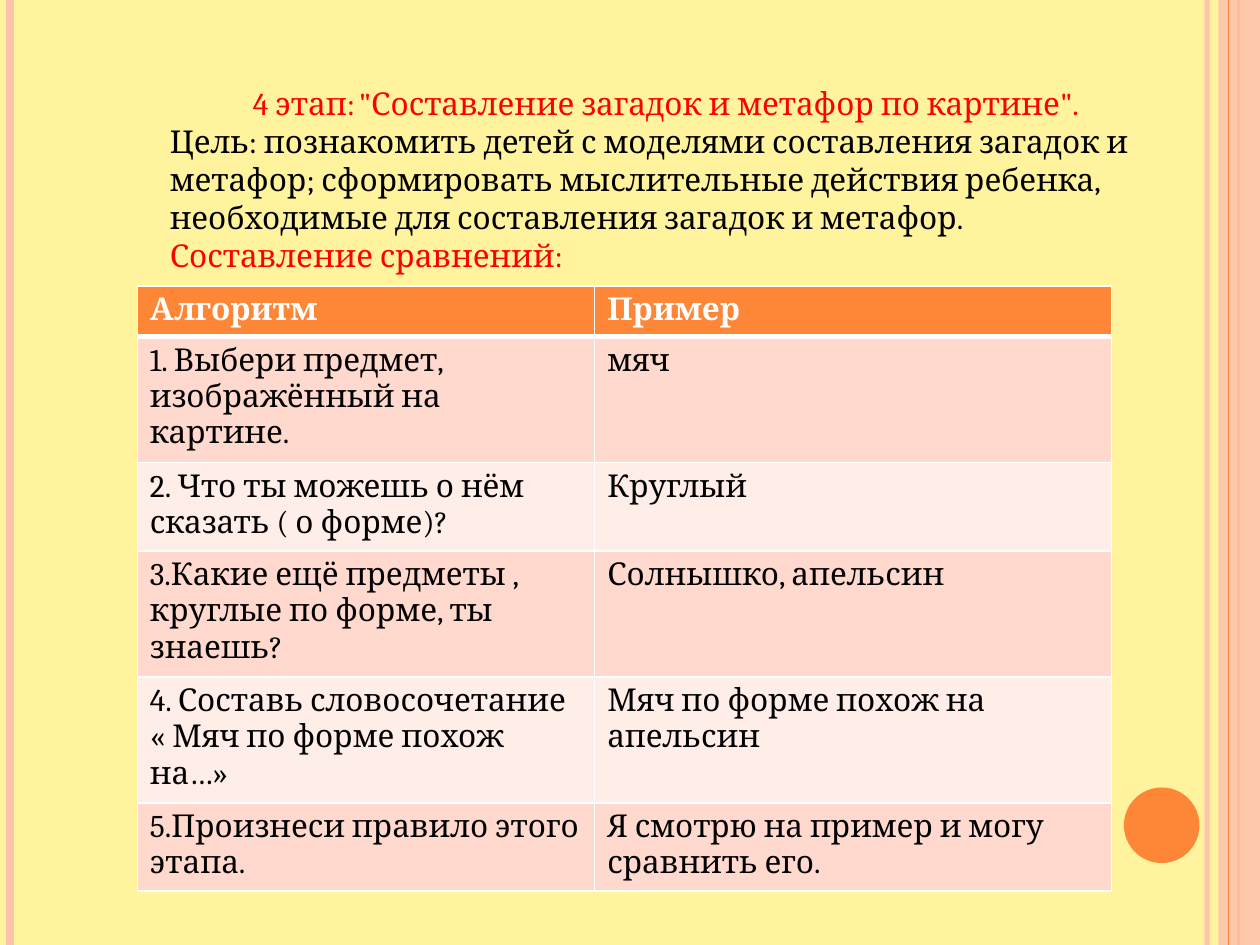
from dataclasses import dataclass
from typing import Any

from lxml import etree
from pptx import Presentation
from pptx import util as u
from pptx.dml import color as dml
from pptx.enum import shapes, text
from pptx.oxml import ns

COLORS = {
    "background": "FFF39D",
    "peach": "FEC3AE",
    "orange": "FE8637",
    "red": "FF0000",
    "black": "000000",
    "white": "FFFFFF",
    "dark_band": "FFD9CE",
    "light_band": "FFEDE8",
}
FONT = {"name": "Cambria", "size": u.Pt(18)}
FRAME = {"word_wrap": True, "vertical_anchor": text.MSO_ANCHOR.TOP}
TABLE_FLAGS = {"first_row": True, "horz_banding": False}
CELL = u.Inches(0.1)
ROWS = 75
COLUMNS = 100


@dataclass(frozen=True)
class Stripe:
    column: float
    weight: float
    color: str
    opacity: int = 100


@dataclass(frozen=True)
class Block:
    left: float
    top: float
    width: float
    height: float


@dataclass(frozen=True)
class Line:
    wording: str
    color: str
    indent: float = 0
    tab: float = 0


LEFT_STRIPES = [
    Stripe(95.8, 3, "peach", 93),
    Stripe(0.8, 4.5, "peach"),
    Stripe(98.3, 1.5, "orange"),
]
INNER_STRIPE = Stripe(97.5, 0.75, "orange")
SIDE_BAND = Block(96.7, 0, 3.3, ROWS)
DISC = Block(89.2, 62.5, 6, 6)
INTRODUCTION = Block(12.5, 6.2, 79.7, 22.2)
ALGORITHM = Block(10.9, 22.7, 77.3, 42)
COLUMN_WIDTHS = [36.3, 41]
ROW_HEIGHTS = [3, 5.2, 5.2, 7.4, 5.2, 5.2]

LINES = [
    Line("4 этап:\t\"Составление загадок и метафор по картине\".", "red", 6.6, 16.3),
    Line("Цель: познакомить детей с моделями составления загадок и метафор; "
         "сформировать мыслительные действия ребенка, необходимые для "
         "составления загадок и метафор.", "black"),
    Line("Составление сравнений:", "red"),
]
STEPS = [
    ("Алгоритм", "Пример"),
    ("1. Выбери предмет, изображённый на картине.", "мяч"),
    ("2. Что ты можешь о нём сказать ( о форме)?", "Круглый"),
    ("3.Какие ещё предметы , круглые по форме, ты знаешь?", "Солнышко, апельсин"),
    ("4. Составь словосочетание « Мяч по форме похож на…»",
     "Мяч по форме похож на апельсин"),
    ("5.Произнеси правило этого этапа.", "Я смотрю на пример и могу сравнить его."),
]


def grid(count: float) -> int:
    return round(count * CELL)


def area(block: Block) -> list[int]:
    return [grid(side) for side in (block.left, block.top, block.width, block.height)]


def apply(target: Any, values: dict[str, Any]) -> None:
    for name, value in values.items():
        setattr(target, name, value)


def paint(fill: Any, color: str, opacity: int = 100) -> None:
    fill.solid()
    fill.fore_color.rgb = dml.RGBColor.from_string(COLORS[color])
    if opacity < 100:
        tint = fill._xPr.find(".//" + ns.qn("a:srgbClr"))
        etree.SubElement(tint, ns.qn("a:alpha"), val=str(opacity * 1000))


def write(paragraph: Any, wording: str, color: str, bold: bool = False) -> None:
    run = paragraph.add_run()
    run.text = wording
    apply(run.font, FONT | {"bold": bold})
    paint(run.font.fill, color)


def draw_stripe(slide: Any, stripe: Stripe) -> None:
    column = grid(stripe.column)
    connector = slide.shapes.add_connector(
        shapes.MSO_CONNECTOR.STRAIGHT, column, 0, column, grid(ROWS))
    connector.line.width = u.Pt(stripe.weight)
    paint(connector.line.fill, stripe.color, stripe.opacity)
    etree.SubElement(connector._element.spPr, ns.qn("a:effectLst"))


def draw_shape(slide: Any, kind: Any, block: Block, color: str, opacity: int = 100) -> None:
    shape = slide.shapes.add_shape(kind, *area(block))
    shape.shadow.inherit = False
    shape.line.fill.background()
    paint(shape.fill, color, opacity)


def draw_introduction(slide: Any) -> None:
    frame = slide.shapes.add_textbox(*area(INTRODUCTION)).text_frame
    apply(frame, FRAME)
    for index, line in enumerate(LINES):
        paragraph = frame.add_paragraph() if index else frame.paragraphs[0]
        write(paragraph, line.wording, line.color)
        properties = paragraph._p.get_or_add_pPr()
        properties.set("indent", str(grid(line.indent)))
        if line.tab:
            stops = etree.SubElement(properties, ns.qn("a:tabLst"))
            etree.SubElement(stops, ns.qn("a:tab"), pos=str(grid(line.tab)), algn="l")


def draw_borders(cell: Any, bottom: float, top: float) -> None:
    properties = cell._tc.get_or_add_tcPr()
    weights = {"lnL": 1, "lnR": 1, "lnT": top, "lnB": bottom}
    for position, (side, weight) in enumerate(weights.items()):
        border = etree.Element(ns.qn(f"a:{side}"), w=str(u.Pt(weight)))
        fill = etree.SubElement(border, ns.qn("a:solidFill"))
        etree.SubElement(fill, ns.qn("a:srgbClr"), val=COLORS["white"])
        properties.insert(position, border)


def draw_algorithm(slide: Any) -> None:
    table = slide.shapes.add_table(
        len(STEPS), len(COLUMN_WIDTHS), *area(ALGORITHM)).table
    apply(table, TABLE_FLAGS)
    for column, width in zip(table.columns, COLUMN_WIDTHS):
        column.width = grid(width)
    for index, (row, height, step) in enumerate(zip(table.rows, ROW_HEIGHTS, STEPS)):
        row.height = grid(height)
        header = index == 0
        band = "orange" if header else ("light_band", "dark_band")[index % 2]
        for cell, wording in zip(row.cells, step):
            write(cell.text_frame.paragraphs[0], wording,
                  "white" if header else "black", header)
            paint(cell.fill, band)
            draw_borders(cell, 3 if header else 1, 3 if index == 1 else 1)


def main() -> None:
    presentation = Presentation()
    apply(presentation, {"slide_width": grid(COLUMNS), "slide_height": grid(ROWS)})
    slide = presentation.slides.add_slide(presentation.slide_layouts[6])
    paint(slide.background.fill, "background")
    for stripe in LEFT_STRIPES:
        draw_stripe(slide, stripe)
    draw_shape(slide, shapes.MSO_SHAPE.RECTANGLE, SIDE_BAND, "peach", 87)
    draw_stripe(slide, INNER_STRIPE)
    draw_shape(slide, shapes.MSO_SHAPE.OVAL, DISC, "orange")
    draw_introduction(slide)
    draw_algorithm(slide)
    presentation.save("out.pptx")


if __name__ == "__main__":
    main()
